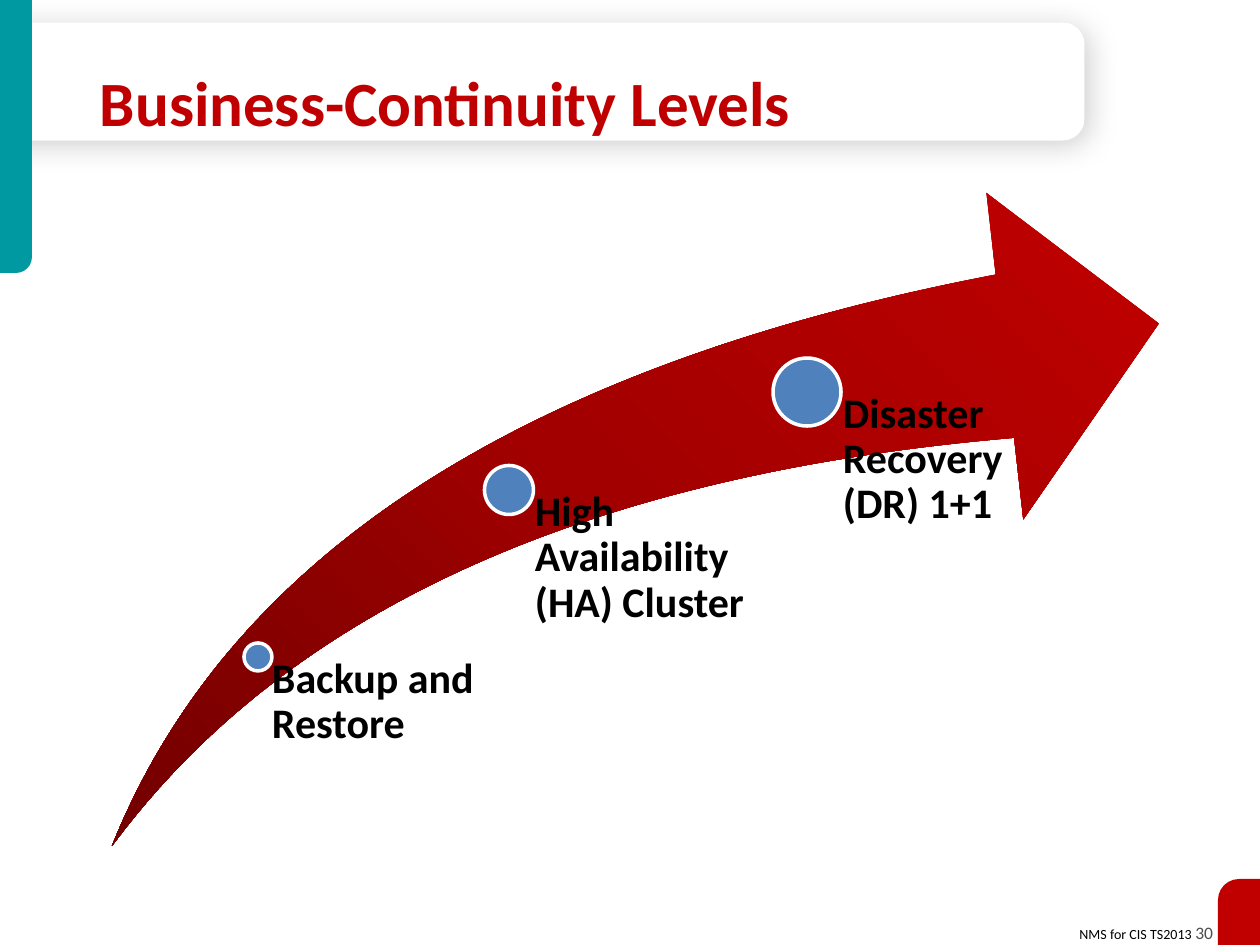
from dataclasses import dataclass

from lxml import etree
from pptx import Presentation
from pptx.dml.color import RGBColor
from pptx.enum.shapes import MSO_SHAPE
from pptx.enum.text import MSO_ANCHOR, PP_ALIGN
from pptx.oxml import parse_xml
from pptx.oxml.ns import qn
from pptx.util import Emu, Pt

EMU_PER_PX = 914400 / 126
ELLIPSE = MSO_SHAPE.OVAL
SWOOSH = MSO_SHAPE.SWOOSH_ARROW
ROUND_ONE = MSO_SHAPE.ROUND_1_RECTANGLE
ROUND_TWO = MSO_SHAPE.ROUND_2_SAME_RECTANGLE
TOP, BOTTOM = MSO_ANCHOR.TOP, MSO_ANCHOR.BOTTOM
LEFT, RIGHT = PP_ALIGN.LEFT, PP_ALIGN.RIGHT

FONT = "Calibri"
WHITE, BLACK, GREY = "FFFFFF", "000000", "4D4D4D"
RED, TEAL, BLUE = "C00000", "0098A1", "4F81BD"
ARROW_STOPS = ((0, "720000"), (50, "A20000"), (100, RED))
ARROW_BOTTOM = 846
A_NS = "http://schemas.openxmlformats.org/drawingml/2006/main"


@dataclass
class Level:
    text: str
    x: int  # dot centre
    y: int
    diameter: int
    width: int
    indent: int


LEVELS = (
    Level("Backup and Restore", 258, 657, 28, 244, 14),
    Level("High Availability (HA) Cluster", 509, 490, 49, 251, 26),
    Level("Disaster Recovery (DR) 1+1", 807, 392, 68, 251, 36),
)


def px(n: float) -> Emu:
    return Emu(round(n * EMU_PER_PX))


def rgb(color: str) -> RGBColor:
    return RGBColor.from_string(color)


def add_shape(shapes, kind, x, y, w, h, fill, *, adj=(), line=None, flip=None):
    sp = shapes.add_shape(kind, px(x), px(y), px(w), px(h))
    sp.shadow.inherit = False
    sp.fill.solid()
    sp.fill.fore_color.rgb = rgb(fill)
    for i, value in enumerate(adj):
        sp.adjustments[i] = value
    if line:
        sp.line.color.rgb = rgb(line)
        sp.line.width = Pt(2)
    else:
        sp.line.fill.background()
    if flip:
        sp._element.spPr.find(qn("a:xfrm")).set(flip, "1")
    return sp


def add_text(shapes, x, y, w, h, runs, *, bold=False, align=LEFT, anchor=TOP,
             spacing=1.0, insets=(0, 0, 0, 0), wrap=True):
    """Write one paragraph of (text, size, colour) runs; insets run left, top, right, bottom."""
    sp = shapes.add_textbox(px(x), px(y), px(w), px(h))
    tf = sp.text_frame
    tf.word_wrap = wrap
    tf.vertical_anchor = anchor
    (tf.margin_left, tf.margin_top,
     tf.margin_right, tf.margin_bottom) = map(px, insets)
    p = tf.paragraphs[0]
    p.alignment = align
    p.line_spacing = spacing
    for text, size, color in runs:
        r = p.add_run()
        r.text = text
        r.font.name = FONT
        r.font.size = Pt(size)
        r.font.bold = bold
        r.font.color.rgb = rgb(color)
    return sp


def set_corner_gradient(sp, stops) -> None:
    """Fill with a circular gradient that spreads from the bottom left corner."""
    gs = "".join(f'<a:gs pos="{pos * 1000}"><a:srgbClr val="{color}"/></a:gs>'
                 for pos, color in stops)
    grad = parse_xml(
        f'<a:gradFill xmlns:a="{A_NS}" rotWithShape="1"><a:gsLst>{gs}</a:gsLst>'
        '<a:path path="circle"><a:fillToRect t="100000" r="100000"/></a:path>'
        '</a:gradFill>')
    solid = sp._element.spPr.find(qn("a:solidFill"))
    solid.getparent().replace(solid, grad)


def add_soft_shadow(sp) -> None:
    effects = sp._element.spPr.find(qn("a:effectLst"))
    shadow = etree.SubElement(effects, qn("a:outerShdw"), blurRad=str(Pt(17)),
                              dist=str(Pt(3)), dir=str(45 * 60000),
                              algn="ctr", rotWithShape="0")
    color = etree.SubElement(shadow, qn("a:srgbClr"), val=BLACK)
    etree.SubElement(color, qn("a:alpha"), val="19000")


def add_frame(shapes) -> None:
    add_text(shapes, 1063, 916, 163, 34,
             [("NMS for CIS TS2013 ", 8, BLACK), ("30", 10, GREY)],
             align=RIGHT, insets=(13, 6, 13, 6), wrap=False)
    banner = add_shape(shapes, ROUND_TWO, 483, -461, 118, 1085, WHITE, adj=(0.184, 0))
    banner.rotation = 90
    add_soft_shadow(banner)
    add_shape(shapes, ROUND_ONE, 0, 0, 32, 273, TEAL, adj=(0.5,), flip="flipV")
    add_shape(shapes, ROUND_ONE, 1218, 879, 42, 66, RED, adj=(0.5,), flip="flipH")


def add_level(shapes, level: Level) -> None:
    d = level.diameter
    add_shape(shapes, ELLIPSE, level.x - d / 2, level.y - d / 2, d, d, BLUE, line=WHITE)
    add_text(shapes, level.x, level.y, level.width, ARROW_BOTTOM - level.y,
             [(level.text, 24, BLACK)], bold=True, spacing=0.9,
             insets=(level.indent, 0, 0, 0))


def main() -> None:
    prs = Presentation()
    prs.slide_width, prs.slide_height = px(1260), px(945)
    slide = prs.slides.add_slide(prs.slide_layouts[6])
    add_frame(slide.shapes)
    add_text(slide.shapes, 88, 37, 932, 102,
             [("Business-Continuity Levels", 36, RED)], bold=True,
             anchor=BOTTOM, spacing=0.85, insets=(12, 0, 12, 0))

    diagram = slide.shapes.add_group_shape().shapes
    arrow = add_shape(diagram, SWOOSH, 112, 193, 1047, ARROW_BOTTOM - 193, RED,
                      adj=(0.25, 0.25))
    set_corner_gradient(arrow, ARROW_STOPS)
    for level in LEVELS:
        add_level(diagram, level)
    prs.save("out.pptx")


if __name__ == "__main__":
    main()
